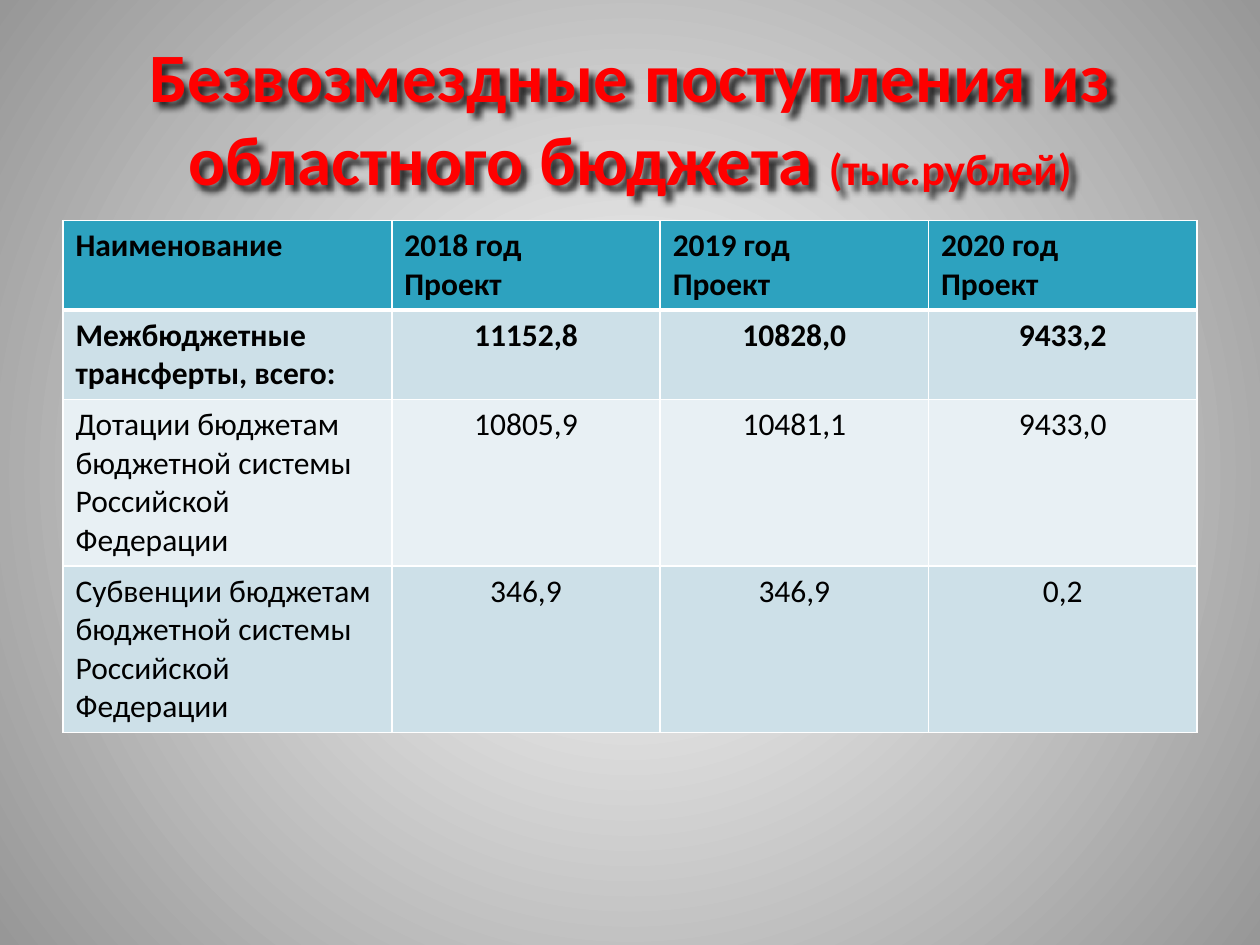
from dataclasses import dataclass

import pptx
import pptx.dml.color
import pptx.enum.text
import pptx.oxml
import pptx.oxml.ns
import pptx.util

Inches = pptx.util.Inches
Pt = pptx.util.Pt
FONT = "Calibri"
NAMESPACE = pptx.oxml.ns.nsdecls("a")


@dataclass
class TableRow:
    cells: tuple[str, ...]
    fill: str
    height: float
    bold: bool = False
    header: bool = False


COLUMN_WIDTHS = (2.61, 2.13, 2.13, 2.13)
ROWS = (
    TableRow(("Наименование", "2018 год\nПроект", "2019 год\nПроект", "2020 год\nПроект"),
             "2DA2BF", 0.71, bold=True, header=True),
    TableRow(("Межбюджетные трансферты, всего:", "11152,8", "10828,0", "9433,2"),
             "CDE0E8", 0.71, bold=True),
    TableRow(("Дотации бюджетам бюджетной системы Российской Федерации",
              "10805,9", "10481,1", "9433,0"), "E8F0F4", 1.32),
    TableRow(("Субвенции бюджетам бюджетной системы Российской Федерации",
              "346,9", "346,9", "0,2"), "CDE0E8", 1.32),
)


def color(value: str) -> pptx.dml.color.RGBColor:
    return pptx.dml.color.RGBColor.from_string(value)


def set_background(slide) -> None:
    """Fill the slide with a circular gradient, light in the centre."""
    fill = slide.background.fill
    fill.gradient()
    for stop, value in zip(fill.gradient_stops, ("FFFFFF", "979797")):
        stop.color.rgb = color(value)
    gradient = slide.element.xpath(".//p:bg//a:gradFill")[0]
    for linear in gradient.xpath("a:lin"):
        gradient.remove(linear)
    gradient.append(pptx.oxml.parse_xml(
        f'<a:path {NAMESPACE} path="circle">'
        '<a:fillToRect l="50000" t="50000" r="50000" b="50000"/></a:path>'))


def add_title(slide) -> None:
    title = slide.shapes.title
    title.left, title.top = Inches(0.5), Inches(0.3)
    title.width, title.height = Inches(9), Inches(1.25)
    frame = title.text_frame
    frame.auto_size = pptx.enum.text.MSO_AUTO_SIZE.NONE
    frame.vertical_anchor = pptx.enum.text.MSO_ANCHOR.MIDDLE
    paragraph = frame.paragraphs[0]
    paragraph.alignment = pptx.enum.text.PP_ALIGN.CENTER
    for text, size in (("Безвозмездные поступления из областного бюджета ", 39.6),
                       ("(тыс.рублей)", 25.2)):
        run = paragraph.add_run()
        run.text = text
        run.font.size = Pt(size)
    paragraph.font.name = FONT
    paragraph.font.bold = True
    paragraph.font.color.rgb = color("FF0000")
    title.element.spPr.append(pptx.oxml.parse_xml(
        f'<a:effectLst {NAMESPACE}><a:outerShdw blurRad="50800" dist="50800" dir="2700000">'
        '<a:srgbClr val="000000"><a:alpha val="80000"/></a:srgbClr>'
        '</a:outerShdw></a:effectLst>'))


def set_borders(cell, top: float, bottom: float) -> None:
    properties = cell._tc.get_or_add_tcPr()
    for side, width in (("L", 1), ("R", 1), ("T", top), ("B", bottom)):
        properties.append(pptx.oxml.parse_xml(
            f'<a:ln{side} {NAMESPACE} w="{Pt(width)}"><a:solidFill>'
            f'<a:srgbClr val="FFFFFF"/></a:solidFill></a:ln{side}>'))


def add_budget_table(slide) -> None:
    table = slide.shapes.add_table(
        len(ROWS), len(COLUMN_WIDTHS), Inches(0.5), Inches(1.75),
        Inches(sum(COLUMN_WIDTHS)), Inches(sum(row.height for row in ROWS))).table
    for column, width in zip(table.columns, COLUMN_WIDTHS):
        column.width = Inches(width)
    for row_index, row in enumerate(ROWS):
        table.rows[row_index].height = Inches(row.height)
        for column_index, text in enumerate(row.cells):
            cell = table.cell(row_index, column_index)
            set_borders(cell, top=3 if row_index == 1 else 1, bottom=3 if row.header else 1)
            cell.fill.solid()
            cell.fill.fore_color.rgb = color(row.fill)
            cell.text = text
            for paragraph in cell.text_frame.paragraphs:
                if column_index and not row.header:
                    paragraph.alignment = pptx.enum.text.PP_ALIGN.CENTER
                paragraph.font.name = FONT
                paragraph.font.size = Pt(18)
                paragraph.font.bold = row.bold
                paragraph.font.color.rgb = color("000000")


def main() -> None:
    presentation = pptx.Presentation()
    presentation.slide_width, presentation.slide_height = Inches(10), Inches(7.5)
    slide = presentation.slides.add_slide(presentation.slide_layouts[5])
    set_background(slide)
    add_title(slide)
    add_budget_table(slide)
    presentation.save("out.pptx")


if __name__ == "__main__":
    main()
